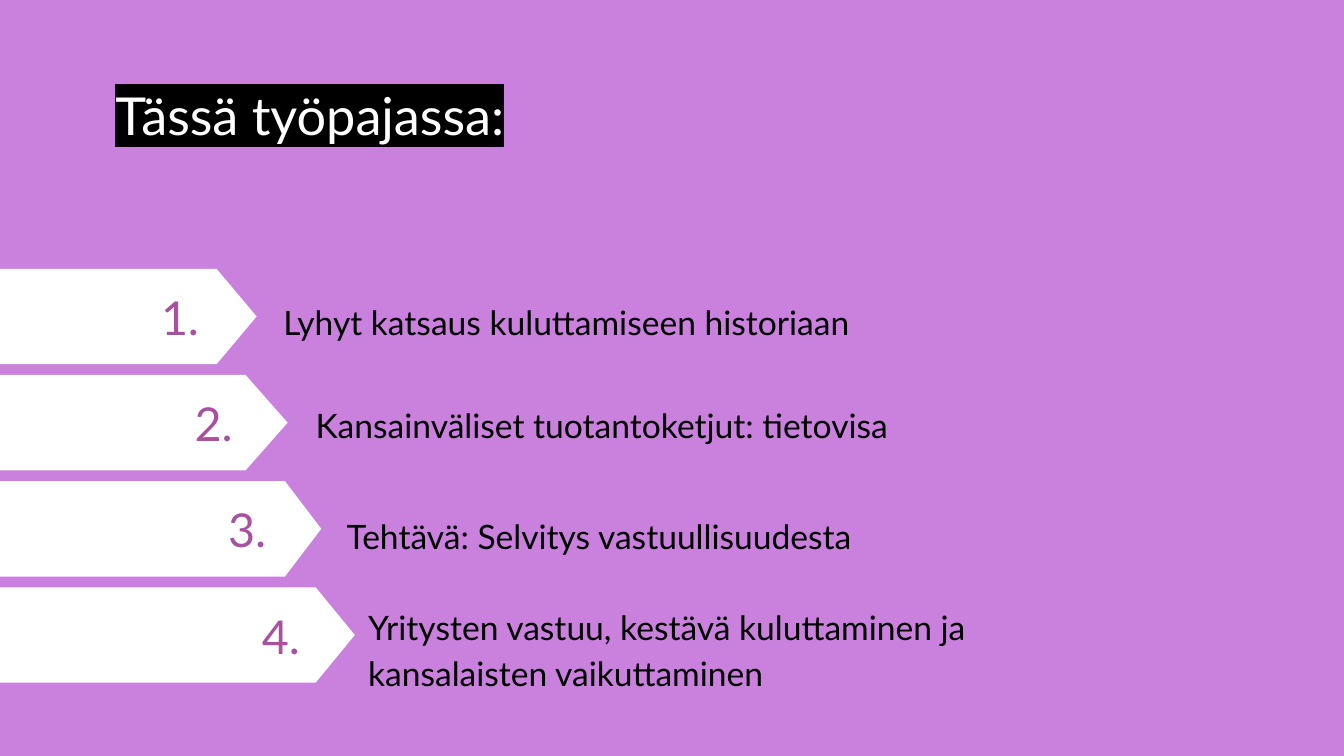
import pptx
import pptx.util
import pptx.dml.color
import pptx.enum.shapes
import pptx.oxml
import pptx.oxml.ns
from pptx.util import Inches

COLORS = {
    "background": "C981DD",
    "arrow": "FFFFFF",
    "number": "A7519F",
    "body": "000000",
    "title": "FFFFFF",
    "highlight": "000000",
}


def color(name):
    return pptx.dml.color.RGBColor.from_string(COLORS[name])


class Slide:
    font = "Lato"
    inset = Inches(0.1)

    def __init__(self, deck):
        self.page = deck.slides.add_slide(deck.slide_layouts[6])
        fill = self.page.background.fill
        fill.solid()
        fill.fore_color.rgb = color("background")

    def arrow(self, left, top, width, height, point):
        shape = self.page.shapes.add_shape(
            pptx.enum.shapes.MSO_SHAPE.PENTAGON,
            Inches(left), Inches(top), Inches(width), Inches(height))
        shape.adjustments[0] = point
        shape.shadow.inherit = False
        shape.fill.solid()
        shape.fill.fore_color.rgb = color("arrow")
        shape.line.fill.background()

    def text(self, words, left, top, width, height, size, ink,
             spacing=1.0, after=0):
        box = self.page.shapes.add_textbox(
            Inches(left), Inches(top), Inches(width), Inches(height))
        frame = box.text_frame
        frame.word_wrap = True
        frame.margin_left = frame.margin_right = self.inset
        frame.margin_top = frame.margin_bottom = self.inset
        frame.text = words
        para = frame.paragraphs[0]
        para.line_spacing = spacing
        para.space_after = pptx.util.Pt(after)
        span = para.runs[0]
        span.font.size = pptx.util.Pt(size)
        span.font.name = self.font
        span.font.color.rgb = color(ink)
        return span

    def title(self, words, left, top, width, height):
        span = self.text(words, left, top, width, height, 28, "title", 1.15, 12)
        mark = pptx.oxml.parse_xml(
            f'<a:highlight {pptx.oxml.ns.nsdecls("a")}>'
            f'<a:srgbClr val="{COLORS["highlight"]}"/></a:highlight>')
        properties = span.font._element
        properties.find(pptx.oxml.ns.qn("a:solidFill")).addnext(mark)


AGENDA = [
    ("Lyhyt katsaus kuluttamiseen historiaan",
     (-0.02, 1.93, 0.42), (2.01, 2.1, 5.74)),
    ("Kansainväliset tuotantoketjut: tietovisa",
     (0, 2.14, 0.44), (2.25, 2.87, 5.65)),
    ("Tehtävä: Selvitys vastuullisuudesta",
     (0, 2.39, 0.38), (2.48, 3.69, 5.38)),
    ("Yritysten vastuu, kestävä kuluttaminen ja kansalaisten vaikuttaminen",
     (0, 2.64, 0.41), (2.64, 4.37, 5.69)),
]


def main():
    deck = pptx.Presentation()
    deck.slide_width = Inches(10)
    deck.slide_height = deck.slide_width * 9 // 16
    slide = Slide(deck)
    slide.title("Tässä työpajassa:", 0.76, 0.45, 6.35, 0.93)
    for index, (words, arrow, label) in enumerate(AGENDA):
        top = 2 + 0.79 * index
        left, width, point = arrow
        slide.arrow(left, top, width, 0.71, point)
        slide.text(f"{index + 1}.", 1.1 + 0.25 * index, top + 0.05,
                   0.8, 0.6, 25, "number")
        slide.text(words, *label, 0.49, 18, "body", 1.15, 10)
    deck.save("out.pptx")


if __name__ == "__main__":
    main()
